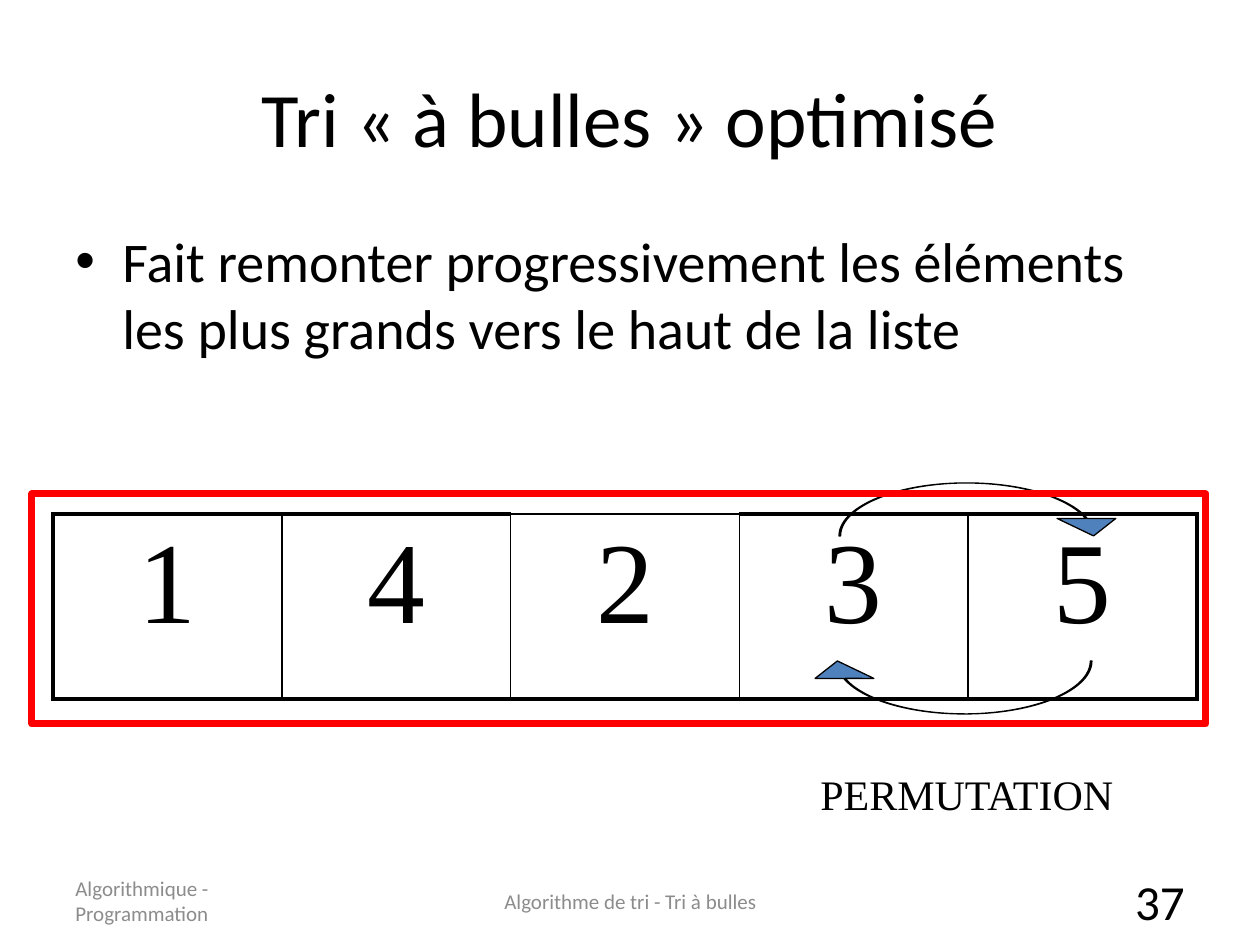
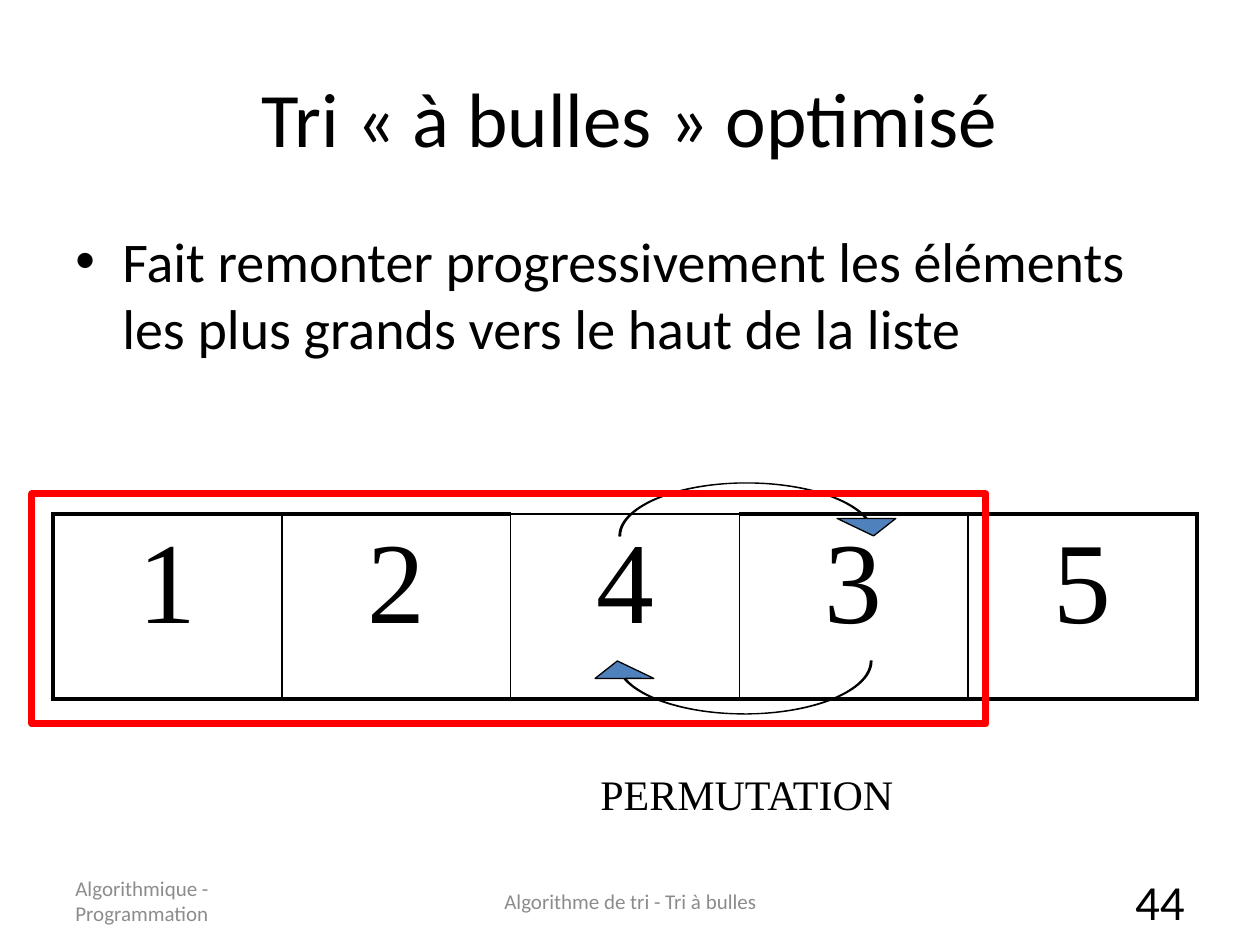
from pptx import Presentation
from pptx.dml.color import RGBColor
from pptx.enum.shapes import MSO_SHAPE
from pptx.enum.text import MSO_ANCHOR, MSO_AUTO_SIZE, PP_ALIGN
from pptx.oxml import parse_xml
from pptx.oxml.ns import nsdecls, qn
from pptx.util import Pt

LEFT, MID, RIGHT = PP_ALIGN.LEFT, PP_ALIGN.CENTER, PP_ALIGN.RIGHT
TOP, CENTER = MSO_ANCHOR.TOP, MSO_ANCHOR.MIDDLE
RECT, CURVE = MSO_SHAPE.RECTANGLE, MSO_SHAPE.CURVED_UP_ARROW
SCALE = 914400 / 126
BLACK, GREY, RED, BLUE = "000000", "8C8C8C", "FF0000", "4F81BD"
SANS, SERIF = "Calibri", "Times New Roman"

# Slide number, list values, count of values still to sort
STEPS = [
    ("37", "14235", 5),
    ("44", "12435", 4),
]
TITLE = "Tri « à bulles » optimisé"
POINT = ("Fait remonter progressivement les éléments "
         "les plus grands vers le haut de la liste")
SWAP = "PERMUTATION"
COURSE = "Algorithmique - Programmation"
TOPIC = "Algorithme de tri - Tri à bulles"

# Box, size, colour, alignment, anchor
STYLES = {
    "title": ((63, 38, 1134, 157), 44, BLACK, MID, CENTER),
    "body": ((63, 220, 1134, 624), 32, BLACK, LEFT, TOP),
    "course": ((63, 876, 293, 50), 12, GREY, LEFT, CENTER),
    "topic": ((431, 876, 399, 50), 12, GREY, MID, CENTER),
    "number": ((903, 876, 294, 50), 28, BLACK, RIGHT, CENTER),
}
LIST_BOX = (53, 514, 1144, 185)
FRAME = (32, 494, 1174, 230)
PACE = 220
SWAP_X = 808
BENDS = [("flipV", 31, 483), ("flipH", 0, 661)]
BEND_SIZE = (284, 53)
BEND_ADJ = (0.03, 1.11, 0.33)
THIN, THICK = 1, 2.25


def emu(*sizes):
    return [round(s * SCALE) for s in sizes]


def rgb(code):
    return RGBColor.from_string(code)


def write(frame, text, size, color=BLACK, align=LEFT, face=SANS):
    para = frame.paragraphs[0]
    para.alignment = align
    run = para.add_run()
    run.text = text
    for key, val in {"size": Pt(size), "name": face}.items():
        setattr(run.font, key, val)
    run.font.color.rgb = rgb(color)
    return para


def space(para):
    """Set the space before to a fifth of a line."""
    props = para._p.get_or_add_pPr()
    props.append(parse_xml(f'<a:spcBef {nsdecls("a")}>'
                           '<a:spcPct val="20000"/></a:spcBef>'))
    return props


def add_text(slide, style, text):
    box, size, color, align, anchor = STYLES[style]
    frame = slide.shapes.add_textbox(*emu(*box)).text_frame
    frame.word_wrap = True
    frame.vertical_anchor = anchor
    return write(frame, text, size, color, align)


def add_point(slide):
    props = space(add_text(slide, "body", POINT))
    indent, = emu(47)
    props.set("marL", str(indent))
    props.set("indent", str(-indent))
    props.append(parse_xml(f'<a:buFont {nsdecls("a")} typeface="Arial"/>'))
    props.append(parse_xml(f'<a:buChar {nsdecls("a")} char="•"/>'))


def add_edges(cell, widths):
    props = cell._tc.get_or_add_tcPr()
    for side, width in widths.items():
        props.append(parse_xml(
            f'<a:ln{side} {nsdecls("a")} w="{Pt(width)}"><a:solidFill>'
            f'<a:srgbClr val="{BLACK}"/></a:solidFill></a:ln{side}>'))
    cell.fill.background()


def add_list(slide, values):
    count = len(values)
    table = slide.shapes.add_table(1, count, *emu(*LIST_BOX)).table
    table.first_row = table.horz_banding = False
    for i, value in enumerate(values):
        cell = table.cell(0, i)
        space(write(cell.text_frame, value, 66, BLACK, MID, SERIF))
        add_edges(cell, {
            "L": THICK if i == 0 else THIN,
            "R": THICK if i == count - 1 else THIN,
            "T": THIN if i == count // 2 else THICK,
            "B": THICK,
        })


def add_form(slide, kind, box, line, width, fill=None):
    form = slide.shapes.add_shape(kind, *emu(*box))
    form.shadow.inherit = False
    form.line.color.rgb = rgb(line)
    form.line.width = Pt(width)
    if fill:
        form.fill.solid()
        form.fill.fore_color.rgb = rgb(fill)
    else:
        form.fill.background()
    return form


def add_swap(slide, shift):
    left = SWAP_X - shift
    for flip, x, y in BENDS:
        bend = add_form(slide, CURVE, (left + x, y, *BEND_SIZE),
                        BLACK, 0.75, BLUE)
        for i, val in enumerate(BEND_ADJ):
            bend.adjustments[i] = val
        bend._element.spPr.find(qn("a:xfrm")).set(flip, "1")
    frame = slide.shapes.add_textbox(*emu(left, 762, 326, 63)).text_frame
    frame.word_wrap = False
    frame.auto_size = MSO_AUTO_SIZE.SHAPE_TO_FIT_TEXT
    write(frame, SWAP, 24, face=SERIF)


def add_step(deck, number, values, left):
    slide = deck.slides.add_slide(deck.slide_layouts[6])
    shift = PACE * (len(values) - left)
    add_text(slide, "title", TITLE)
    add_point(slide)
    add_list(slide, values)
    add_swap(slide, shift)
    x, y, width, height = FRAME
    add_form(slide, RECT, (x, y, width - shift, height), RED, 4)
    for style, text in (("course", COURSE), ("topic", TOPIC),
                        ("number", number)):
        add_text(slide, style, text)


def main():
    deck = Presentation()
    deck.slide_width, deck.slide_height = emu(1260, 945)
    for step in STEPS:
        add_step(deck, *step)
    deck.save("out.pptx")


if __name__ == "__main__":
    main()
